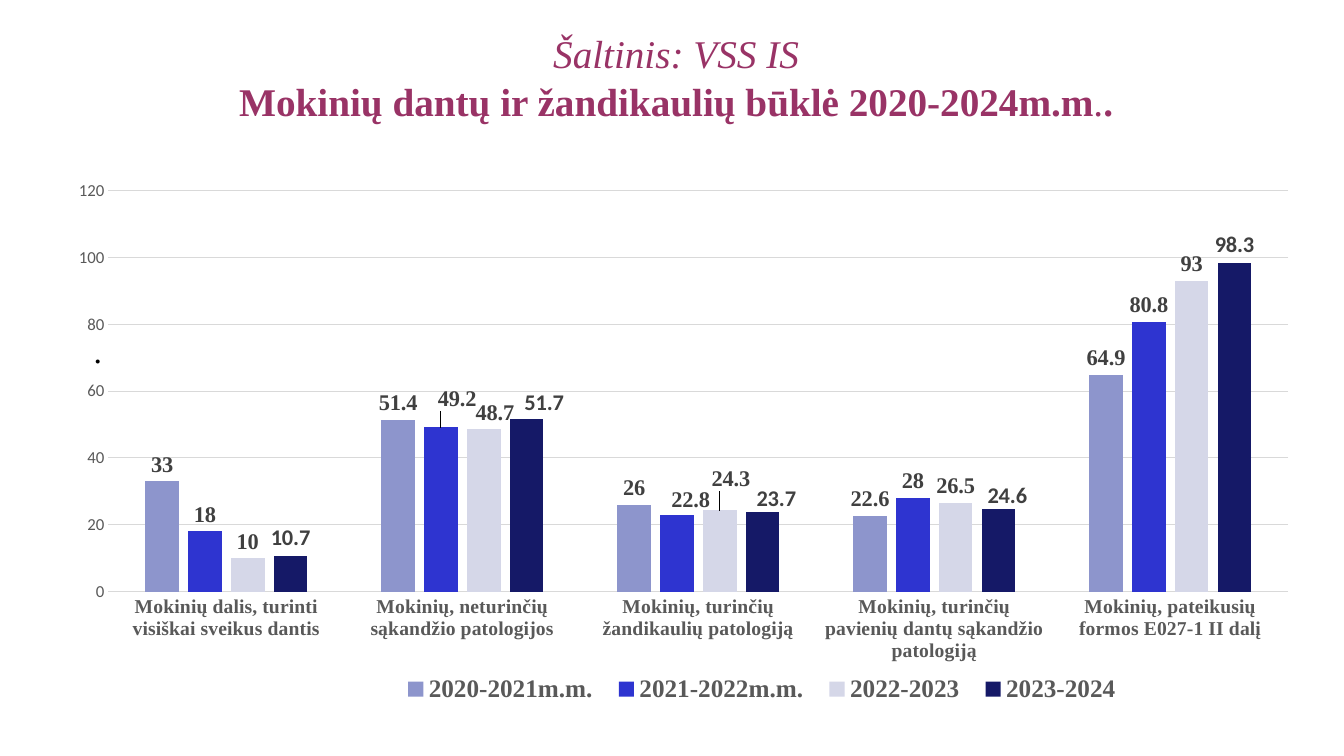
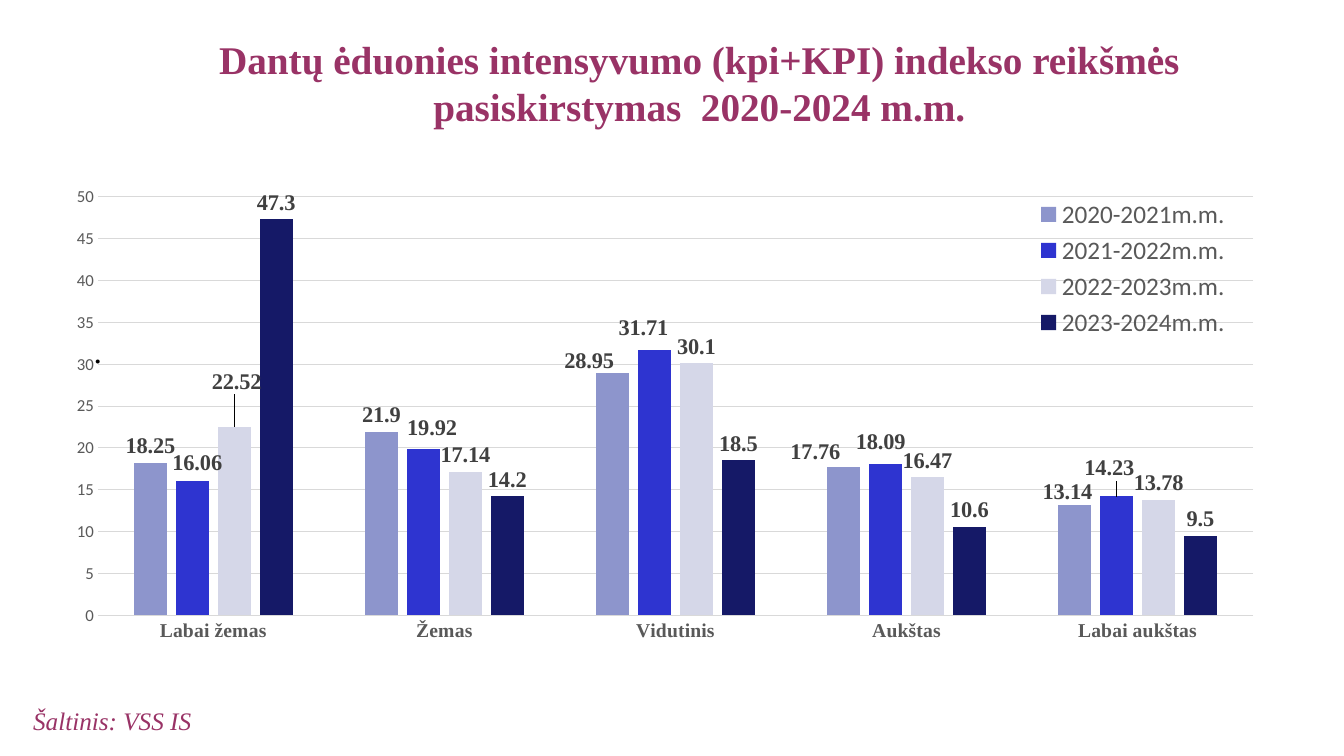
from dataclasses import dataclass
from typing import NamedTuple

from lxml import etree
from pptx import Presentation
from pptx.chart.data import CategoryChartData
from pptx.dml.color import RGBColor
from pptx.enum.chart import XL_CHART_TYPE, XL_LABEL_POSITION, XL_LEGEND_POSITION, XL_TICK_MARK
from pptx.enum.text import MSO_ANCHOR, MSO_AUTO_SIZE, PP_ALIGN
from pptx.oxml.ns import qn
from pptx.util import Inches, Pt

COLUMNS = XL_CHART_TYPE.COLUMN_CLUSTERED
OUTSIDE = XL_LABEL_POSITION.OUTSIDE_END
BOTTOM, CORNER = XL_LEGEND_POSITION.BOTTOM, XL_LEGEND_POSITION.CORNER
NO_TICK = XL_TICK_MARK.NONE
CENTER, ANCHOR_BOTTOM = PP_ALIGN.CENTER, MSO_ANCHOR.BOTTOM
NO_FIT = MSO_AUTO_SIZE.NONE

WIDTH, HEIGHT = Inches(13.33), Inches(7.5)
SERIF, SANS = "Times New Roman", "Calibri"
PLUM, BLACK, LABEL, AXIS, GRID = "993366", "000000", "404040", "595959", "D9D9D9"
YEAR_COLORS = ("8D95CC", "2E34D0", "D5D7E8", "151967")
SOURCE = "Šaltinis: VSS IS"


class Box(NamedTuple):
    """Left, top, width and height in percent of the enclosing area."""
    left: float
    top: float
    width: float
    height: float


class Span(NamedTuple):
    text: str
    bold: bool = False
    italic: bool = False


class Shift(NamedTuple):
    """Label offset in percent of the chart size."""
    x: float
    y: float


@dataclass
class SchoolYear:
    name: str
    values: tuple[float, ...]
    shifts: dict[int, Shift]
    label_font: str = SERIF


@dataclass
class YearChart:
    box: Box
    plot: Box
    categories: tuple[str, ...]
    years: tuple[SchoolYear, ...]
    maximum: int
    step: int
    legend_at: XL_LEGEND_POSITION
    legend_box: Box
    legend_font: str
    legend_bold: bool


@dataclass
class Page:
    title_box: Box
    title: tuple[tuple[Span, ...], ...]
    chart: YearChart
    source_box: Box | None = None


DOT_BOX = Box(6.23, 42.93, 68.79, 6.67)

PAGES = (
    Page(
        Box(5.33, 3.73, 89.95, 13.33),
        (
            (Span(SOURCE, italic=True),),
            (
                Span("Mokinių dantų ir žandikaulių būklė 2020-2024m.m", bold=True),
                Span("."),
                Span(".", bold=True),
            ),
        ),
        YearChart(
            Box(3.75, 23.87, 93.7, 71.2),
            Box(4.6, 1.9, 93.7, 74.5),
            (
                "Mokinių dalis, turinti visiškai sveikus dantis",
                "Mokinių, neturinčių sąkandžio patologijos",
                "Mokinių, turinčių žandikaulių patologiją",
                "Mokinių, turinčių pavienių dantų sąkandžio patologiją",
                "Mokinių, pateikusių formos E027-1 II dalį",
            ),
            (
                SchoolYear("2020-2021m.m.", (33, 51.4, 26, 22.6, 64.9), {}),
                SchoolYear("2021-2022m.m.", (18, 49.2, 22.8, 28, 80.8),
                           {1: Shift(1.3, -2.2), 2: Shift(1.1, 0.2)}),
                SchoolYear("2022-2023", (10, 48.7, 24.3, 26.5, 93),
                           {1: Shift(0.9, 0.2), 2: Shift(0.9, -2.8)}),
                SchoolYear("2023-2024", (10.7, 51.7, 23.7, 24.6, 98.3),
                           {1: Shift(1.4, 0.4), 2: Shift(1.1, 0.9), 3: Shift(0.7, 0.9)}, SANS),
            ),
            120, 20, BOTTOM, Box(27, 91, 59, 7), SERIF, True,
        ),
    ),
    Page(
        Box(6.23, 4.93, 91.6, 12.8),
        ((Span("Dantų ėduonies intensyvumo (kpi+KPI) indekso reikšmės "
               "pasiskirstymas  2020-2024 m.m.", bold=True),),),
        YearChart(
            Box(4.43, 22.4, 91.75, 64),
            Box(3.1, 5.7, 93.7, 86.5),
            ("Labai žemas", "Žemas", "Vidutinis", "Aukštas", "Labai aukštas"),
            (
                SchoolYear("2020-2021m.m.", (18.25, 21.9, 28.95, 17.76, 13.14),
                           {2: Shift(-1.9, 1), 3: Shift(-2.3, 0.4), 4: Shift(-0.6, 0.6)}),
                SchoolYear("2021-2022m.m.", (16.06, 19.92, 31.71, 18.09, 14.23),
                           {0: Shift(0.4, -0.2), 1: Shift(0.7, -0.8), 2: Shift(-0.9, -1),
                            3: Shift(-0.4, -1), 4: Shift(-0.6, -2.3)}),
                SchoolYear("2022-2023m.m.", (22.52, 17.14, 30.1, 16.47, 13.78),
                           {0: Shift(0.2, -5.8)}),
                SchoolYear("2023-2024m.m.", (47.3, 14.2, 18.5, 10.6, 9.5), {}),
            ),
            50, 5, CORNER, Box(78.8, 5, 16.5, 31), SANS, False,
        ),
        Box(1.73, 92.67, 14.55, 5.33),
    ),
)


def rgb(color: str) -> RGBColor:
    return RGBColor.from_string(color)


def on_slide(box: Box) -> tuple[int, int, int, int]:
    return (int(WIDTH * box.left / 100), int(HEIGHT * box.top / 100),
            int(WIDTH * box.width / 100), int(HEIGHT * box.height / 100))


def style_font(font, size: float, color: str, name: str = SERIF,
               bold: bool = False, italic: bool = False) -> None:
    font.size, font.name, font.bold, font.italic = Pt(size), name, bold, italic
    font.color.rgb = rgb(color)


def set_layout(parent, index: int, place: Box | Shift, inner: bool = False) -> None:
    for old in parent.findall(qn("c:layout")):
        parent.remove(old)
    layout = etree.Element(qn("c:layout"))
    manual = etree.SubElement(layout, qn("c:manualLayout"))
    settings = [("layoutTarget", "inner")] if inner else []
    if isinstance(place, Box):
        settings += [("xMode", "edge"), ("yMode", "edge")]
    settings += [(tag, f"{share / 100:.4f}") for tag, share in zip("xywh", place)]
    for tag, value in settings:
        etree.SubElement(manual, qn(f"c:{tag}")).set("val", value)
    parent.insert(index, layout)


def add_title(slide, page: Page) -> None:
    title = slide.shapes.title
    title.left, title.top, title.width, title.height = on_slide(page.title_box)
    frame = title.text_frame
    frame.auto_size, frame.word_wrap = NO_FIT, True
    frame.vertical_anchor = ANCHOR_BOTTOM
    for index, line in enumerate(page.title):
        paragraph = frame.add_paragraph() if index else frame.paragraphs[0]
        paragraph.alignment = CENTER
        for span in line:
            run = paragraph.add_run()
            run.text = span.text
            style_font(run.font, 28, PLUM, bold=span.bold, italic=span.italic)


def add_text(slide, box: Box, text: str, size: float, color: str, italic: bool = False) -> None:
    frame = slide.shapes.add_textbox(*on_slide(box)).text_frame
    frame.word_wrap = True
    frame.text = text
    style_font(frame.paragraphs[0].runs[0].font, size, color, italic=italic)


def style_series(series, year: SchoolYear, color: str) -> None:
    series.format.fill.solid()
    series.format.fill.fore_color.rgb = rgb(color)
    series.invert_if_negative = False
    labels = series.data_labels
    labels.show_value, labels.position = True, OUTSIDE
    style_font(labels.font, 16, LABEL, year.label_font, bold=True)
    for point, shift in year.shifts.items():
        label = series.points[point].data_label
        style_font(label.font, 16, LABEL, year.label_font, bold=True)
        label.position = OUTSIDE
        node = series._element.find(f"{qn('c:dLbls')}/{qn('c:dLbl')}[{qn('c:idx')}][last()]")
        set_layout(node, 1, shift)


def style_axes(chart, maximum: int, step: int) -> None:
    categories, scale = chart.category_axis, chart.value_axis
    for axis in (categories, scale):
        axis.major_tick_mark = axis.minor_tick_mark = NO_TICK
    style_font(categories.tick_labels.font, 14, AXIS, bold=True)
    style_font(scale.tick_labels.font, 12, AXIS, SANS)
    scale.minimum_scale, scale.maximum_scale, scale.major_unit = 0, maximum, step
    scale.has_major_gridlines = True
    scale.format.line.fill.background()
    for line in (categories.format.line, scale.major_gridlines.format.line):
        line.color.rgb, line.width = rgb(GRID), Pt(0.75)


def add_year_chart(slide, content: YearChart) -> None:
    data = CategoryChartData()
    data.categories = content.categories
    for year in content.years:
        data.add_series(year.name, year.values)
    chart = slide.shapes.add_chart(COLUMNS, *on_slide(content.box), data).chart
    chart.has_title = False
    style_font(chart.font, 10, BLACK, SANS)
    style_axes(chart, content.maximum, content.step)

    columns = chart.plots[0]
    columns.gap_width, columns.overlap, columns.vary_by_categories = 219, -27, False
    for series, year, color in zip(columns.series, content.years, YEAR_COLORS):
        style_series(series, year, color)

    chart.has_legend = True
    legend = chart.legend
    legend.position = content.legend_at
    legend.include_in_layout = content.legend_at == CORNER
    style_font(legend.font, 18, AXIS, content.legend_font, bold=content.legend_bold)
    set_layout(legend._element, 1, content.legend_box)
    plot_area = chart._chartSpace.find(f"{qn('c:chart')}/{qn('c:plotArea')}")
    set_layout(plot_area, 0, content.plot, inner=True)


def main() -> None:
    deck = Presentation()
    deck.slide_width, deck.slide_height = WIDTH, HEIGHT
    title_only = deck.slide_layouts.get_by_name("Title Only")
    for page in PAGES:
        slide = deck.slides.add_slide(title_only)
        add_title(slide, page)
        add_text(slide, DOT_BOX, ".", 24, BLACK)
        add_year_chart(slide, page.chart)
        if page.source_box:
            add_text(slide, page.source_box, SOURCE, 18, PLUM, italic=True)
    deck.save("out.pptx")


if __name__ == "__main__":
    main()
